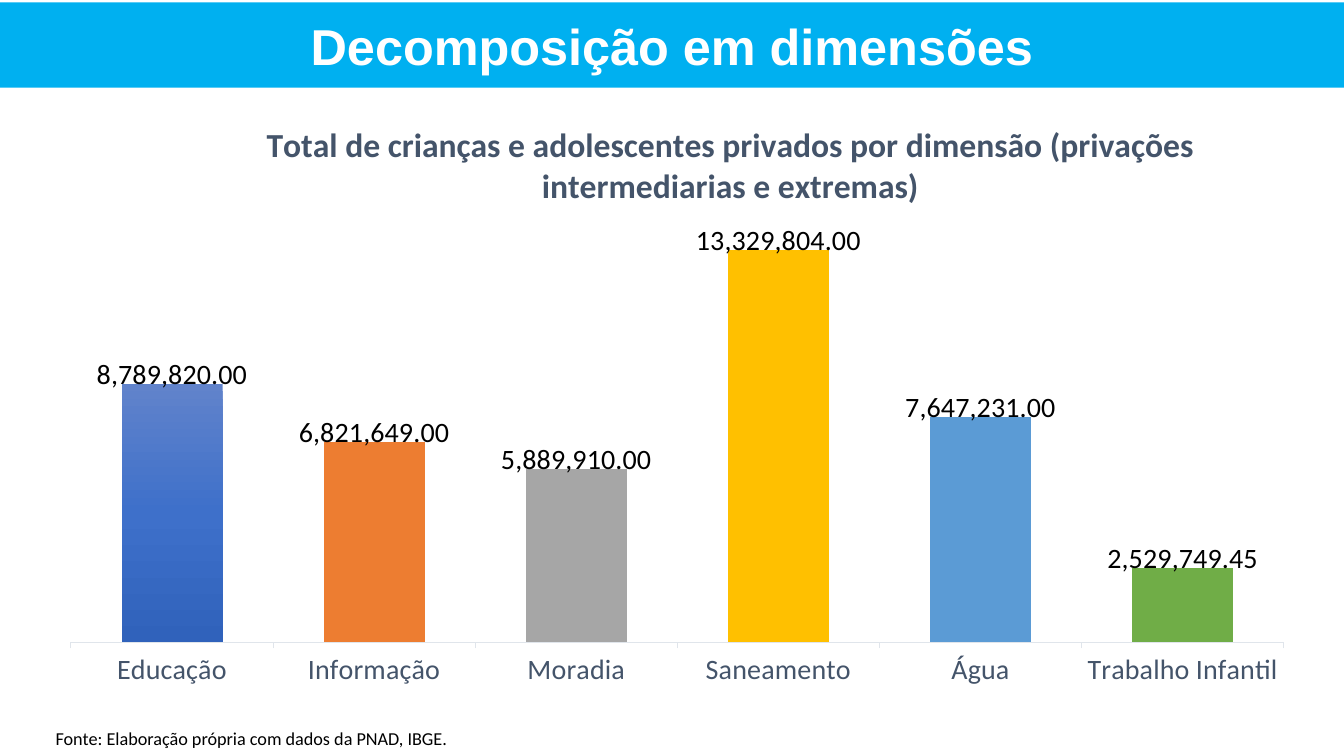
from copy import deepcopy

from pptx import Presentation
from pptx import util as u
from pptx.chart.data import CategoryChartData
from pptx.dml.color import RGBColor
from pptx.enum import chart as ch, text as tx
from pptx.oxml import parse_xml
from pptx.oxml.ns import nsdecls

WHITE = RGBColor(0xFF, 0xFF, 0xFF)
BLACK = RGBColor(0, 0, 0)
CYAN = RGBColor(0x00, 0xB0, 0xF0)
SLATE = RGBColor(0x44, 0x54, 0x6A)
PALE = RGBColor(0xE0, 0xE5, 0xEB)
BLUES = [(0, RGBColor(0x61, 0x83, 0xCB)), (0.5, RGBColor(0x3E, 0x70, 0xCA)),
         (1, RGBColor(0x30, 0x62, 0xBB))]
ORANGE = RGBColor(0xED, 0x7D, 0x31)
GREY = RGBColor(0xA6, 0xA6, 0xA6)
GOLD = RGBColor(0xFF, 0xC0, 0x00)
SKY = RGBColor(0x5B, 0x9B, 0xD5)
GREEN = RGBColor(0x70, 0xAD, 0x47)

WIDE, HIGH = u.Inches(13.33), u.Inches(7.5)
FORMAT = "#,##0.00"
DATA = [("Educação", 8789820, BLUES), ("Informação", 6821649, ORANGE),
        ("Moradia", 5889910, GREY), ("Saneamento", 13329804, GOLD),
        ("Água", 7647231, SKY), ("Trabalho Infantil", 2529749.45, GREEN)]


def share(left, top, width, height):
    """Turn shares of the slide into a box of lengths."""
    return int(left * WIDE), int(top * HIGH), int(width * WIDE), int(height * HIGH)


def style(font, size, color, name="Calibri", bold=False):
    """Set the look of a font."""
    font.size, font.name, font.bold = u.Pt(size), name, bold
    font.color.rgb = color


def layout(target="", **sizes):
    """Build a manual chart layout from shares of the chart."""
    tags = f'<c:layoutTarget val="{target}"/>' if target else ""
    if "w" in sizes or target == "" and sizes.pop("edge", False):
        tags += '<c:xMode val="edge"/><c:yMode val="edge"/>'
    tags += "".join(f'<c:{key} val="{val}"/>' for key, val in sizes.items())
    return parse_xml(f'<c:layout {nsdecls("c")}><c:manualLayout>{tags}'
                     '</c:manualLayout></c:layout>')


def place(parent, item):
    """Put a layout into a chart part in place of any old one."""
    for old in parent.xpath("c:layout"):
        parent.remove(old)
    before = parent.xpath("c:idx | c:tx")
    parent.insert(len(before), item)


def banner(slide, box):
    """Format the title as a full-width band."""
    title = slide.shapes.title
    title.left, title.top, title.width, title.height = box
    title.fill.solid()
    title.fill.fore_color.rgb = CYAN
    frame = title.text_frame
    frame.text = "Decomposição em dimensões"
    frame.vertical_anchor = tx.MSO_ANCHOR.MIDDLE
    para = frame.paragraphs[0]
    para.alignment = tx.PP_ALIGN.CENTER
    style(para.font, 36, WHITE, "Arial", True)


def paint(point, color):
    """Fill a column with one colour or with gradient stops."""
    fill = point.format.fill
    if isinstance(color, RGBColor):
        fill.solid()
        fill.fore_color.rgb = color
        return
    fill.gradient()
    fill.gradient_angle = 270
    stops = point.format._element.xpath(".//a:gsLst")[-1]
    stops.append(deepcopy(stops[-1]))
    for stop, (pos, shade) in zip(fill.gradient_stops, color):
        stop.position, stop.color.rgb = pos, shade


def tag(point):
    """Show a column's value across its top edge."""
    label = point.data_label
    style(label.font, 20, BLACK)
    label.position = ch.XL_LABEL_POSITION.OUTSIDE_END
    item = label._get_or_add_dLbl()
    place(item, layout(x=0, y=0.02))
    item.insert(2, parse_xml(f'<c:numFmt {nsdecls("c")} formatCode="{FORMAT}" '
                             'sourceLinked="0"/>'))


def columns(slide, box):
    """Draw the column chart of totals by dimension."""
    data = CategoryChartData(number_format=FORMAT)
    data.categories = [name for name, _, _ in DATA]
    data.add_series("Series 1", [val for _, val, _ in DATA])
    chart = slide.shapes.add_chart(ch.XL_CHART_TYPE.COLUMN_CLUSTERED, *box, data).chart
    style(chart.font, 10, BLACK)
    chart.has_legend = False
    chart.has_title = True
    frame = chart.chart_title.text_frame
    frame.text = ("Total de crianças e adolescentes privados por dimensão "
                  "(privações intermediarias e extremas)")
    style(frame.paragraphs[0].font, 24, SLATE, bold=True)
    place(chart.chart_title._element, layout(edge=True, x=0.17, y=0.03))

    axis = chart.category_axis
    style(axis.tick_labels.font, 20, SLATE)
    axis.major_tick_mark = ch.XL_TICK_MARK.OUTSIDE
    axis.format.line.color.rgb = PALE
    axis.format.line.width = u.Pt(0.75)
    scale = chart.value_axis
    scale.minimum_scale, scale.maximum_scale = 0, 14000000
    scale.has_major_gridlines = False
    scale.visible = False

    plot = chart.plots[0]
    plot.gap_width = 100
    plot.vary_by_categories = False
    place(chart._chartSpace.xpath("c:chart/c:plotArea")[0],
          layout("inner", x=0.02, y=0.22, w=0.96, h=0.685))
    plot.has_data_labels = True
    labels = plot.data_labels
    labels.show_value = True
    labels.number_format, labels.number_format_is_linked = FORMAT, False
    style(labels.font, 20, BLACK)
    for i, (_, _, color) in enumerate(DATA):
        point = plot.series[0].points[i]
        paint(point, color)
        tag(point)


def source(slide, box):
    """Write the source line under the chart."""
    frame = slide.shapes.add_textbox(*box).text_frame
    frame.word_wrap = False
    frame.auto_size = tx.MSO_AUTO_SIZE.SHAPE_TO_FIT_TEXT
    frame.text = "Fonte: Elaboração própria com dados da PNAD, IBGE."
    style(frame.paragraphs[0].font, 13, BLACK)


def main():
    """Build and save the slide."""
    deck = Presentation()
    deck.slide_width, deck.slide_height = WIDE, HIGH
    slide = deck.slides.add_slide(deck.slide_layouts[5])
    columns(slide, share(0.034, 0.13, 0.94, 0.795))
    source(slide, share(0.034, 0.955, 0.314, 0.043))
    banner(slide, share(0, 0.003, 1, 0.113))
    deck.save("out.pptx")


if __name__ == "__main__":
    main()
